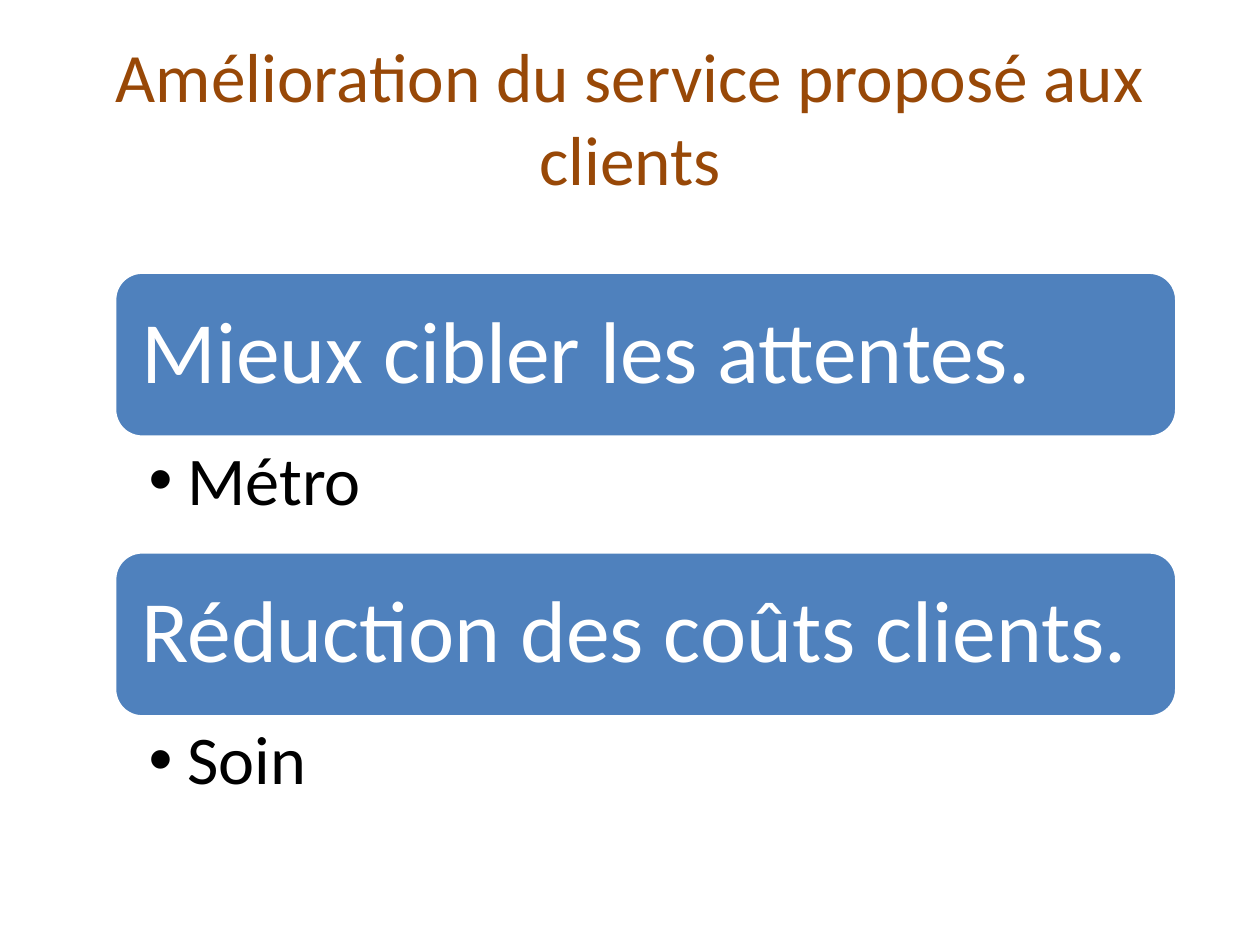
from dataclasses import dataclass

from lxml.etree import SubElement
from pptx import Presentation
from pptx.dml.color import RGBColor
from pptx.enum.shapes import MSO_SHAPE
from pptx.enum.text import MSO_ANCHOR, PP_ALIGN
from pptx.oxml.ns import qn
from pptx.util import Inches, Pt

BROWN = RGBColor(0x98, 0x48, 0x07)
BLUE = RGBColor(0x4F, 0x81, 0xBD)
WHITE = RGBColor(0xFF, 0xFF, 0xFF)
BLACK = RGBColor(0x00, 0x00, 0x00)

LEFT, TOP, WIDTH = 0.91, 2.16, 8.43
BANNER_H, EXAMPLE_H = 1.31, 0.91


@dataclass(frozen=True)
class Goal:
    heading: str
    example: str


GOALS = [
    Goal("Mieux cibler les attentes.", "Métro"),
    Goal("Réduction des coûts clients.", "Soin"),
]


def write(sp, text: str, size: float, color: RGBColor, margins: tuple,
          frame: dict, para: dict):
    """Write one formatted paragraph in a shape and return it."""
    tf = sp.text_frame
    sides = ("margin_left", "margin_top", "margin_right", "margin_bottom")
    insets = {side: Inches(m) for side, m in zip(sides, margins)}
    for name, value in {"word_wrap": True, **insets, **frame}.items():
        setattr(tf, name, value)
    p = tf.paragraphs[0]
    for name, value in para.items():
        setattr(p, name, value)
    r = p.add_run()
    r.text = text
    for name, value in {"name": "Calibri", "size": Pt(size)}.items():
        setattr(r.font, name, value)
    r.font.color.rgb = color
    return p


def add_title(slide, text: str) -> None:
    """Add the centred slide title."""
    sp = slide.shapes.add_textbox(Inches(0.5), Inches(0.3), Inches(9), Inches(1.25))
    write(sp, text, 39.6, BROWN, (0.1, 0.05, 0.1, 0.05),
          {"vertical_anchor": MSO_ANCHOR.MIDDLE}, {"alignment": PP_ALIGN.CENTER})


def add_banner(slide, text: str, top: float) -> None:
    """Add a rounded blue banner holding a goal heading."""
    sp = slide.shapes.add_shape(MSO_SHAPE.ROUNDED_RECTANGLE, Inches(LEFT), Inches(top),
                                Inches(WIDTH), Inches(BANNER_H))
    sp.shadow.inherit = False
    sp.fill.solid()
    sp.fill.fore_color.rgb = BLUE
    sp.line.color.rgb = WHITE
    sp.line.width = Pt(2)
    write(sp, text, 50, WHITE, (0.15,) * 4, {"vertical_anchor": MSO_ANCHOR.MIDDLE},
          {"alignment": PP_ALIGN.LEFT, "line_spacing": 0.9})


def add_example(slide, text: str, top: float) -> None:
    """Add the bulleted example below a banner."""
    sp = slide.shapes.add_textbox(Inches(LEFT), Inches(top), Inches(WIDTH), Inches(EXAMPLE_H))
    p = write(sp, text, 39, BLACK, (0.27, 0.07, 0.39, 0.07),
              {"vertical_anchor": MSO_ANCHOR.TOP}, {"level": 1, "line_spacing": 0.9})
    pPr = p._p.get_or_add_pPr()
    indent = Inches(0.31)
    pPr.set("marL", str(indent))
    pPr.set("indent", str(-indent))
    SubElement(pPr, qn("a:buFont"), typeface="Arial")
    SubElement(pPr, qn("a:buChar"), char="•")


def main() -> None:
    """Build the slide and save it."""
    prs = Presentation()
    prs.slide_width, prs.slide_height = Inches(10), Inches(7.5)
    slide = prs.slides.add_slide(prs.slide_layouts[6])
    add_title(slide, "Amélioration du service proposé aux clients")
    for i, goal in enumerate(GOALS):
        top = TOP + i * (BANNER_H + EXAMPLE_H)
        add_banner(slide, goal.heading, top)
        add_example(slide, goal.example, top + BANNER_H)
    prs.save("out.pptx")


if __name__ == "__main__":
    main()
